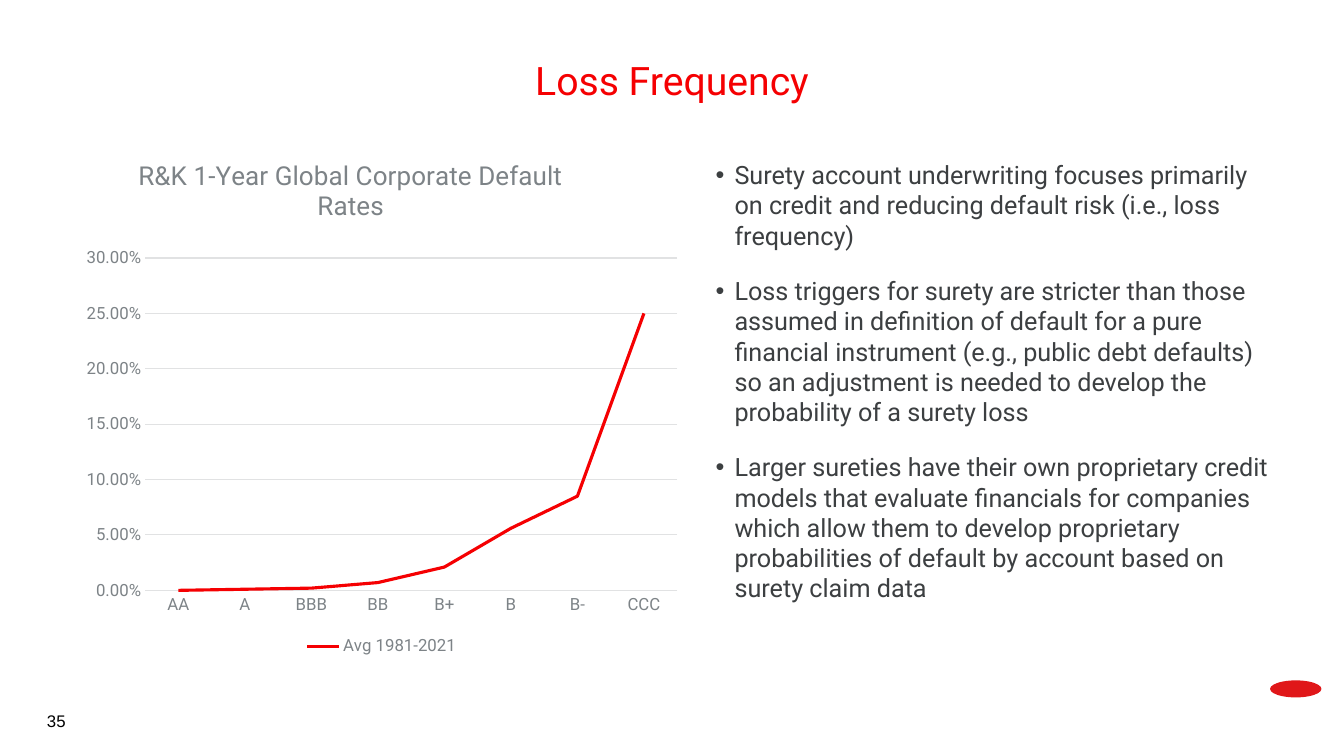
from dataclasses import dataclass

from lxml import etree
from pptx import Presentation
from pptx.chart.data import CategoryChartData
from pptx.dml.color import RGBColor
from pptx.enum.chart import XL_CHART_TYPE as ChartType, XL_LEGEND_POSITION as LegendPosition
from pptx.enum.chart import XL_MARKER_STYLE as Marker, XL_TICK_MARK as Tick
from pptx.enum.shapes import MSO_SHAPE as Shape
from pptx.enum.text import MSO_ANCHOR as Anchor, PP_ALIGN as Align
from pptx.oxml import parse_xml
from pptx.oxml.ns import nsdecls, qn
from pptx.util import Pt

COLORS = {"red": "F50002", "emblem": "E01719", "text": "3C3F41",
          "muted": "7D8387", "grid": "E1E2E3", "black": "000000"}
CHART_TITLE = ["R&K 1-Year Global Corporate Default", "Rates"]
DEFAULT_RATES = {"AA": 0, "A": 0.001, "BBB": 0.002, "BB": 0.007,
                 "B+": 0.021, "B": 0.056, "B-": 0.085, "CCC": 0.25}
BULLETS = [
    "Surety account underwriting focuses primarily on credit and reducing default risk "
    "(i.e., loss frequency)",
    "Loss triggers for surety are stricter than those assumed in definition of default for a "
    "pure financial instrument (e.g., public debt defaults) so an adjustment is needed to "
    "develop the probability of a surety loss",
    "Larger sureties have their own proprietary credit models that evaluate financials for "
    "companies which allow them to develop proprietary probabilities of default by account "
    "based on surety claim data",
]
BULLET_INDENT = 13.5


@dataclass
class TextBlock:
    left: float
    top: float
    width: float
    height: float
    lines: list[str]
    size: float
    color: str
    font: str = "Roboto"
    align: Align = Align.LEFT
    anchor: Anchor = Anchor.TOP
    bulleted: bool = False


TEXT_BLOCKS = [
    TextBlock(36, 36.7, 888, 35.3, ["Loss Frequency"], 28, "red", align=Align.CENTER),
    TextBlock(18, 500.4, 36, 28.8, ["35"], 12, "black", "Arial", Align.RIGHT, Anchor.MIDDLE),
    TextBlock(511.2, 113.9, 396, 363.6, BULLETS, 18, "text", bulleted=True),
]


def rgb(name: str) -> RGBColor:
    return RGBColor.from_string(COLORS[name])


def style_font(font, size: float, color: str, name: str = "Roboto") -> None:
    font.size, font.name, font.bold = Pt(size), name, False
    font.color.rgb = rgb(color)


def style_line(line, color: str, width: float) -> None:
    line.color.rgb = rgb(color)
    line.width = Pt(width)


def add_bullet(para) -> None:
    properties = para._p.get_or_add_pPr()
    properties.set("marL", str(Pt(BULLET_INDENT)))
    properties.set("indent", str(-Pt(BULLET_INDENT)))
    color = etree.SubElement(properties, qn("a:buClr"))
    etree.SubElement(color, qn("a:srgbClr"), val=COLORS["text"])
    etree.SubElement(properties, qn("a:buFont"), typeface="Arial")
    etree.SubElement(properties, qn("a:buChar"), char="•")


def add_text(slide, block: TextBlock) -> None:
    box = slide.shapes.add_textbox(Pt(block.left), Pt(block.top), Pt(block.width), Pt(block.height))
    frame = box.text_frame
    frame.word_wrap = True
    frame.vertical_anchor = block.anchor
    if block.bulleted:
        frame.margin_left = frame.margin_top = frame.margin_right = frame.margin_bottom = 0
    for index, line in enumerate(block.lines):
        para = frame.add_paragraph() if index else frame.paragraphs[0]
        para.text = line
        para.alignment = block.align
        if block.bulleted:
            add_bullet(para)
        if index:
            para.space_before = Pt(18)
        style_font(para.font, block.size, block.color, block.font)


def manual_layout(target: str, **fractions: float):
    tags = "".join(f'<c:{key} val="{value}"/>' for key, value in fractions.items())
    return parse_xml(f'<c:layout {nsdecls("c")}><c:manualLayout>{target}'
                     f'<c:xMode val="edge"/><c:yMode val="edge"/>{tags}'
                     '</c:manualLayout></c:layout>')


def replace_layout(parent, layout, position: int) -> None:
    for old in parent.findall(qn("c:layout")):
        parent.remove(old)
    parent.insert(position, layout)


def add_chart_title(chart) -> None:
    chart.has_title = True
    frame = chart.chart_title.text_frame
    for index, line in enumerate(CHART_TITLE):
        para = frame.add_paragraph() if index else frame.paragraphs[0]
        para.text = line
        para.alignment = Align.CENTER
        style_font(para.font, 18.6, "muted")
    chart.chart_title.include_in_layout = False
    replace_layout(chart.chart_title._element, manual_layout("", x=0.1, y=0.01), 1)


def add_default_chart(slide) -> None:
    data = CategoryChartData(number_format="0.00%")
    data.categories = list(DEFAULT_RATES)
    data.add_series("Avg 1981-2021", list(DEFAULT_RATES.values()))
    chart = slide.shapes.add_chart(ChartType.LINE, Pt(52.6), Pt(108), Pt(440), Pt(363.6), data).chart
    style_font(chart.font, 10, "text")
    add_chart_title(chart)
    plot_area = chart._chartSpace.chart.plotArea
    replace_layout(plot_area, manual_layout('<c:layoutTarget val="inner"/>',
                                            x=0.116, y=0.21, w=0.864, h=0.653), 0)

    chart.has_legend = True
    chart.legend.position = LegendPosition.BOTTOM
    chart.legend.include_in_layout = False
    style_font(chart.legend.font, 12, "muted")

    for axis in (chart.category_axis, chart.value_axis):
        axis.major_tick_mark = axis.minor_tick_mark = Tick.NONE
        style_font(axis.tick_labels.font, 12, "muted")
    style_line(chart.category_axis.format.line, "grid", 0.75)
    values = chart.value_axis
    values.minimum_scale, values.maximum_scale, values.major_unit = 0, 0.3, 0.05
    values.tick_labels.number_format = "0.00%"
    values.tick_labels.number_format_is_linked = False
    values.format.line.fill.background()
    style_line(values.major_gridlines.format.line, "grid", 0.75)

    chart.plots[0].vary_by_categories = False
    series = chart.plots[0].series[0]
    series.smooth = False
    series.marker.style = Marker.NONE
    style_line(series.format.line, "red", 2.25)


def add_emblem(slide) -> None:
    emblem = slide.shapes.add_shape(Shape.OVAL, Pt(907.2), Pt(486), Pt(36.7), Pt(12.2))
    emblem.shadow.inherit = False
    emblem.fill.solid()
    emblem.fill.fore_color.rgb = rgb("emblem")
    emblem.line.fill.background()


def main() -> None:
    """Build the loss frequency slide."""
    deck = Presentation()
    deck.slide_width, deck.slide_height = Pt(960), Pt(540)
    page = deck.slides.add_slide(deck.slide_layouts[6])
    add_emblem(page)
    add_default_chart(page)
    for block in TEXT_BLOCKS:
        add_text(page, block)
    deck.save("out.pptx")


if __name__ == "__main__":
    main()
